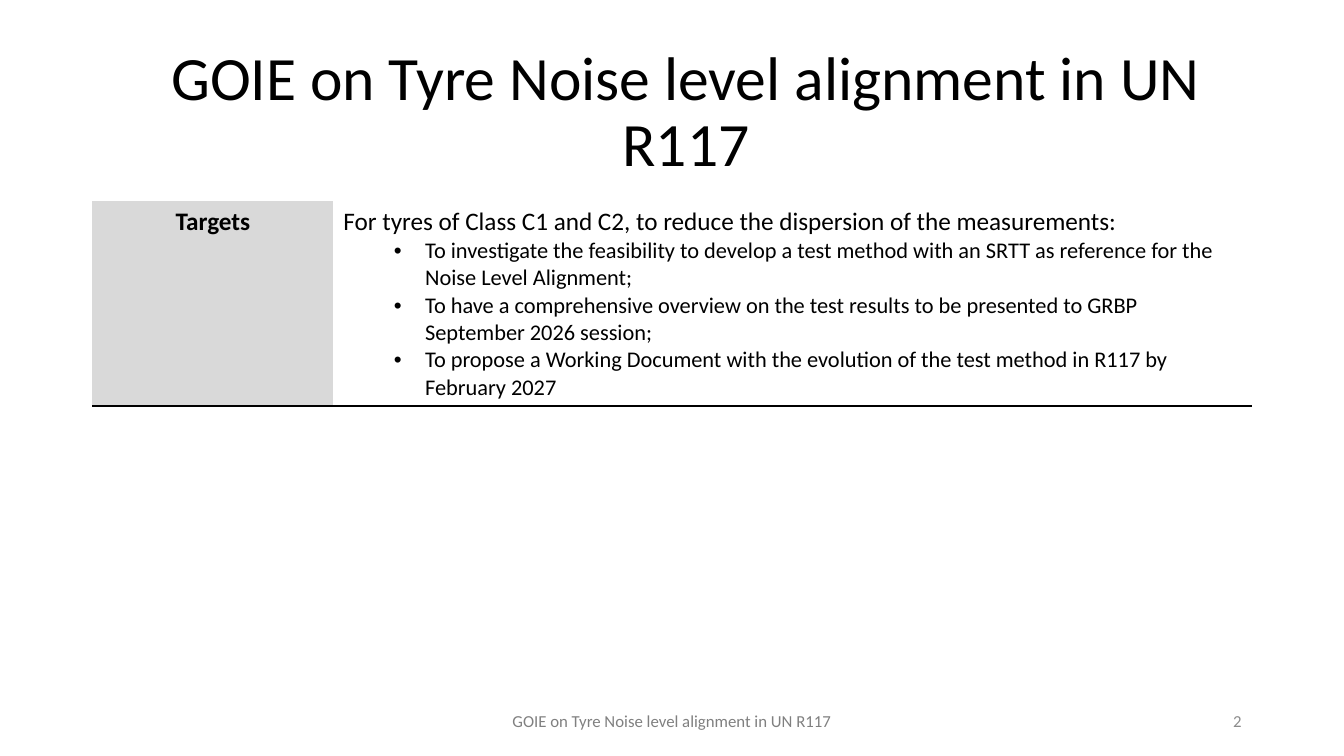
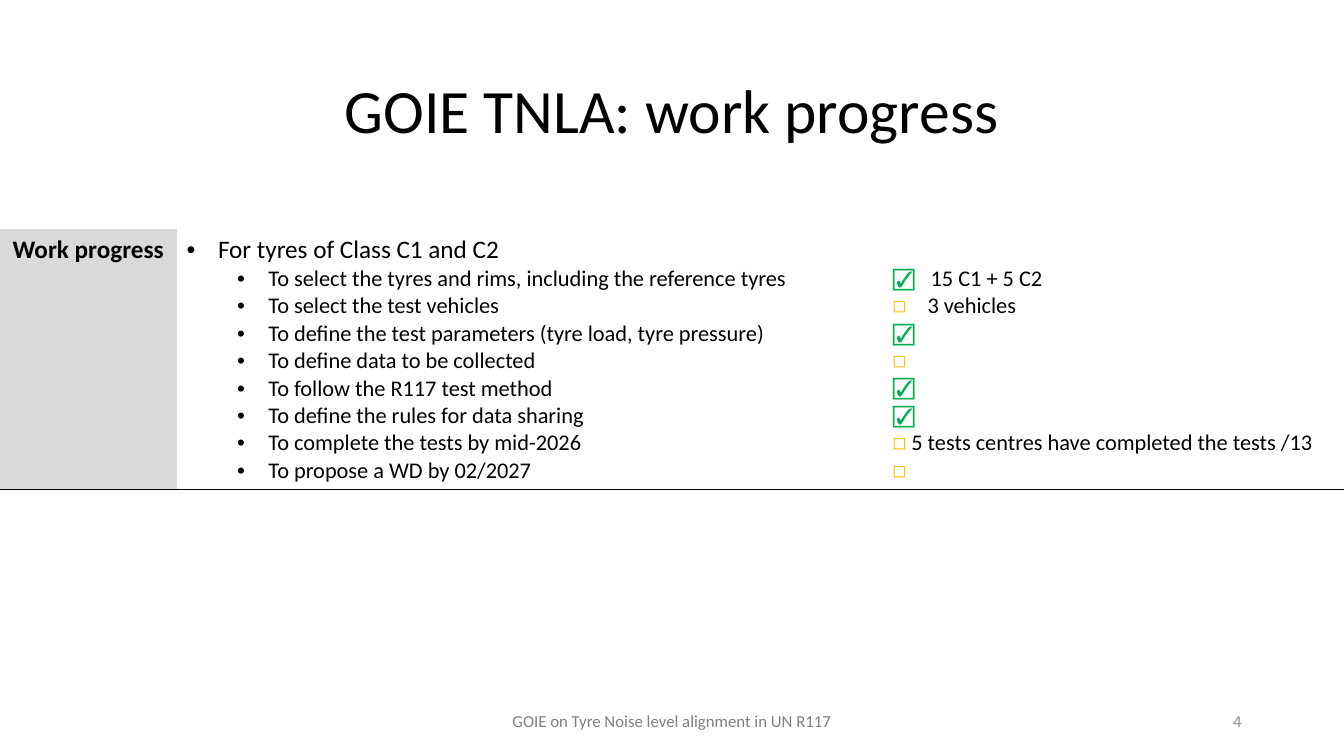
import pptx
import pptx.dml.color
import pptx.enum.text
import pptx.oxml
import pptx.oxml.ns
import pptx.util
from lxml import etree

Cm = pptx.util.Cm
Pt = pptx.util.Pt
RGBColor = pptx.dml.color.RGBColor
ALIGN = pptx.enum.text.PP_ALIGN
qn = pptx.oxml.ns.qn

BLACK = RGBColor(0x00, 0x00, 0x00)
LABEL_GREY = RGBColor(0xD9, 0xD9, 0xD9)
FOOTER_GREY = RGBColor(0x80, 0x80, 0x80)
NUMBER_GREY = RGBColor(0x8C, 0x8C, 0x8C)
DONE_GREEN = RGBColor(0x00, 0xB0, 0x50)
OPEN_AMBER = RGBColor(0xFF, 0xC0, 0x00)

FONT = "Calibri"
TOPIC = "GOIE on Tyre Noise level alignment in UN R117"
HANGING = 0.79
CLOSING_ROW = 0.33
DONE, OPEN = "☑", "◻"
MARK_COLORS = {DONE: DONE_GREEN, OPEN: OPEN_AMBER}

# Slide content; lengths in cm, each status is mark, note and note offset
SLIDES = [
    {
        "title": TOPIC, "title_width": 29.92, "number": "2",
        "table": (2.33, 5.07, 5.16), "columns": [6.07, 23.14],
        "label": "Targets",
        "intro": "For tyres of Class C1 and C2, to reduce the dispersion of the measurements:",
        "intro_bullet": False,
        "tasks": [
            "To investigate the feasibility to develop a test method with an SRTT as reference for the Noise Level Alignment;",
            "To have a comprehensive overview on the test results to be presented to GRBP September 2026 session;",
            "To propose a Working Document with the evolution of the test method in R117 by February 2027",
        ],
        "statuses": [],
    },
    {
        "title": "GOIE TNLA: work progress", "title_width": 29.21, "number": "4",
        "table": (0, 5.78, 6.56), "columns": [4.45, 17.79, 11.63],
        "label": "Work progress",
        "intro": "For tyres of Class C1 and C2",
        "intro_bullet": True,
        "tasks": [
            "To select the tyres and rims, including the reference tyres",
            "To select the test vehicles",
            "To define the test parameters (tyre load, tyre pressure)",
            "To define data to be collected",
            "To follow the R117 test method",
            "To define the rules for data sharing",
            "To complete the tests by mid-2026",
            "To propose a WD by 02/2027",
        ],
        "statuses": [
            (DONE, "15 C1 + 5 C2", 0.96),
            (OPEN, "3 vehicles", 0.88),
            (DONE, "", 0),
            (OPEN, "", 0),
            (DONE, "", 0),
            (DONE, "", 0),
            (OPEN, "5 tests centres have completed the tests /13", 0),
            (OPEN, "", 0),
        ],
    },
]


def write(paragraph, text, size, color=BLACK, bold=False):
    run = paragraph.add_run()
    run.text = text
    run.font.name = FONT
    run.font.size = Pt(size)
    run.font.bold = bold
    run.font.color.rgb = color


def set_bullet(paragraph, left):
    properties = paragraph._p.get_or_add_pPr()
    properties.set("marL", str(Cm(left)))
    properties.set("indent", str(-Cm(HANGING)))
    etree.SubElement(properties, qn("a:buFont")).set("typeface", "Arial")
    etree.SubElement(properties, qn("a:buChar")).set("char", "•")


deck = pptx.Presentation()
deck.slide_width = Cm(33.87)
deck.slide_height = Cm(19.05)

for content in SLIDES:
    slide = deck.slides.add_slide(deck.slide_layouts[6])

    # Title, footer and slide number
    for text, box, size, color, align, spacing in [
        (content["title"], (2.33, 1.02, content["title_width"], 3.68), 44, BLACK, ALIGN.CENTER, 0.9),
        (TOPIC, (11.22, 17.66, 11.43, 1.01), 12, FOOTER_GREY, ALIGN.CENTER, 1.0),
        (content["number"], (23.92, 17.66, 7.62, 1.01), 12, NUMBER_GREY, ALIGN.RIGHT, 1.0),
    ]:
        frame = slide.shapes.add_textbox(*map(Cm, box)).text_frame
        frame.word_wrap = True
        frame.vertical_anchor = pptx.enum.text.MSO_ANCHOR.MIDDLE
        line = frame.paragraphs[0]
        line.alignment = align
        line.line_spacing = spacing
        write(line, text, size, color)

    # Table: a content row, then an empty closing row under a rule
    left, top, height = content["table"]
    columns = content["columns"]
    table = slide.shapes.add_table(
        2, len(columns), Cm(left), Cm(top), Cm(sum(columns)), Cm(height + CLOSING_ROW)).table
    table.first_row = False
    table.horz_banding = False
    for column, width in zip(table.columns, columns):
        column.width = Cm(width)
    for row, row_height, ruled_side in zip(table.rows, (height, CLOSING_ROW), ("lnB", "lnT")):
        row.height = Cm(row_height)
        for cell in row.cells:
            cell.fill.background()
            cell_properties = cell._tc.get_or_add_tcPr()
            for position, side in enumerate(("lnL", "lnR", "lnT", "lnB")):
                border = etree.Element(qn("a:" + side))
                if side == ruled_side:
                    border.set("w", str(Pt(1)))
                    paint = etree.SubElement(border, qn("a:solidFill"))
                    etree.SubElement(paint, qn("a:srgbClr")).set("val", str(BLACK))
                else:
                    etree.SubElement(border, qn("a:noFill"))
                cell_properties.insert(position, border)
    cells = list(table.rows[0].cells)

    # Label cell
    cells[0].fill.solid()
    cells[0].fill.fore_color.rgb = LABEL_GREY
    label = cells[0].text_frame.paragraphs[0]
    label.alignment = ALIGN.CENTER
    write(label, content["label"], 18, bold=True)

    # Intro and tasks
    tasks_frame = cells[1].text_frame
    intro = tasks_frame.paragraphs[0]
    write(intro, content["intro"], 18)
    if content["intro_bullet"]:
        set_bullet(intro, HANGING)
    for task in content["tasks"]:
        item = tasks_frame.add_paragraph()
        item.level = 1
        set_bullet(item, 2.06)
        write(item, task, 16)

    # Status of each task, starting one intro line lower
    if content["statuses"]:
        cells[2].margin_top = Cm(0.9)
        cells[2].margin_right = 0
    for index, (mark, note, offset) in enumerate(content["statuses"]):
        status_frame = cells[2].text_frame
        status = status_frame.add_paragraph() if index else status_frame.paragraphs[0]
        write(status, mark, 16, MARK_COLORS[mark])
        if offset:
            tabs = etree.SubElement(status._p.get_or_add_pPr(), qn("a:tabLst"))
            etree.SubElement(tabs, qn("a:tab"), pos=str(Cm(offset)), algn="l")
        if note:
            write(status, ("\t" if offset else " ") + note, 16)

deck.save("out.pptx")
